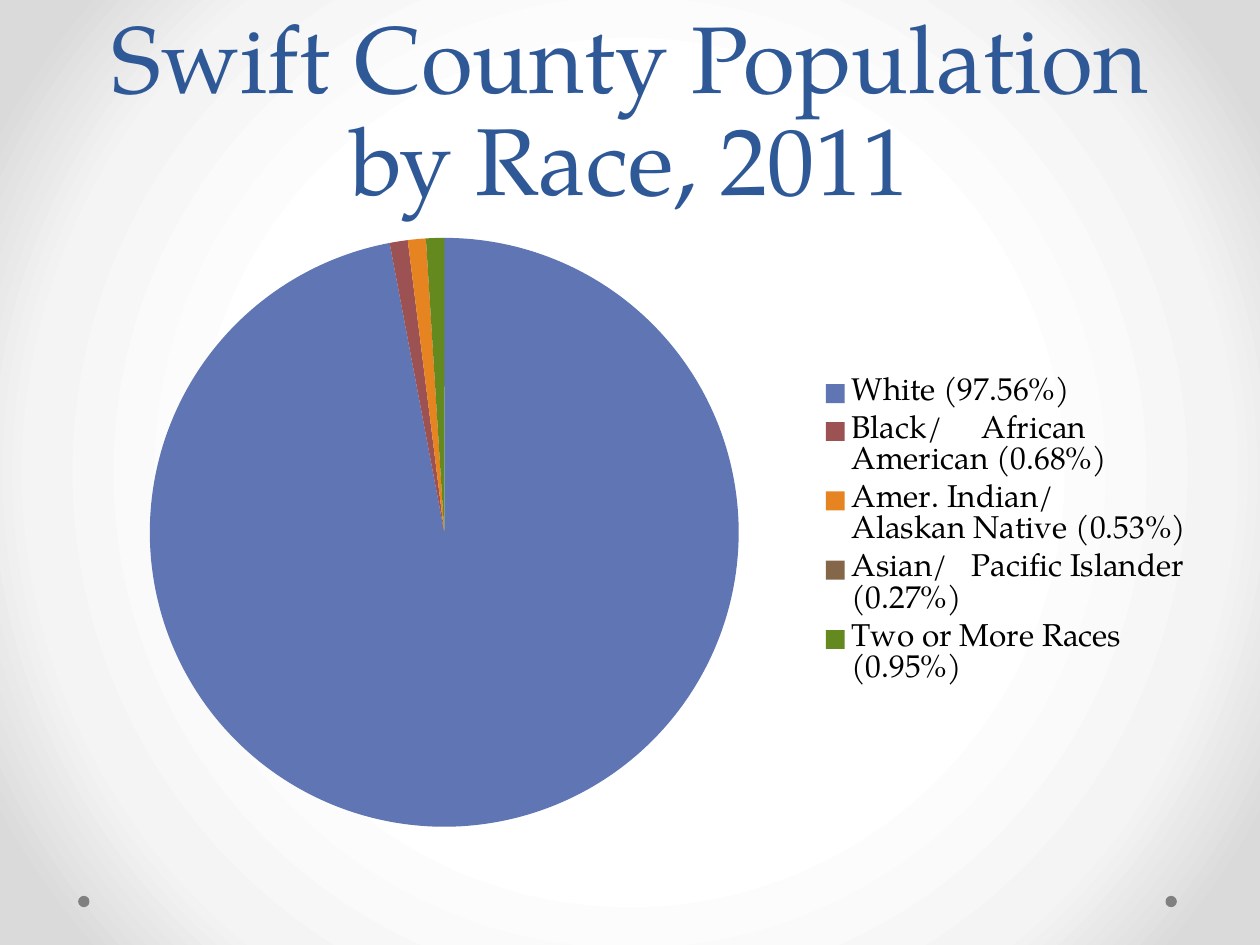
from lxml.etree import SubElement
from pptx import Presentation
from pptx.chart.data import CategoryChartData
from pptx.dml.color import RGBColor
from pptx.enum.chart import XL_CHART_TYPE, XL_LEGEND_POSITION
from pptx.enum.shapes import MSO_SHAPE
from pptx.enum.text import MSO_ANCHOR, PP_ALIGN
from pptx.oxml.ns import qn
from pptx.util import Inches, Pt

FONT = "TeX Gyre Pagella"
COLORS = {"title": "2F5897", "text": "000000", "dot": "808080"}
BACKGROUND_STOPS = [(50, "FFFFFF"), (76, "F4F4F4"), (92, "DADADA")]
RACES = [
    ("White (97.56%)", 98, "6076B4"),
    ("Black/     African American (0.68%)", 1, "9C5252"),
    ("Amer. Indian/    Alaskan Native (0.53%)", 1, "E68422"),
    ("Asian/   Pacific Islander (0.27%)", 0, "846648"),
    ("Two or More Races (0.95%)", 1, "63891F"),
]


def rgb(value):
    return RGBColor.from_string(value)


def set_radial_background(s):
    """Fill the background with a gradient that spreads from the centre."""
    s.background.fill.gradient()
    grad = next(s.element.iter(qn("a:gradFill")))
    for child in list(grad):
        grad.remove(child)
    stops = SubElement(grad, qn("a:gsLst"))
    for position, color in BACKGROUND_STOPS:
        stop = SubElement(stops, qn("a:gs"), pos=str(position * 1000))
        SubElement(stop, qn("a:srgbClr"), val=color)
    path = SubElement(grad, qn("a:path"), path="circle")
    SubElement(path, qn("a:fillToRect"), l="50000", t="50000", r="50000", b="50000")


def add_dot(s, left):
    sp = s.shapes.add_shape(
        MSO_SHAPE.OVAL, Inches(left), Inches(7.11), Inches(0.09), Inches(0.09))
    sp.shadow.inherit = False
    sp.fill.solid()
    sp.fill.fore_color.rgb = rgb(COLORS["dot"])
    sp.line.fill.background()


def add_title(s, text):
    sp = s.shapes.add_textbox(Inches(0.5), Inches(0), Inches(9), Inches(1.75))
    tf = sp.text_frame
    tf.word_wrap = True
    tf.vertical_anchor = MSO_ANCHOR.BOTTOM
    p = tf.paragraphs[0]
    p.text = text
    p.alignment = PP_ALIGN.CENTER
    p.line_spacing = Pt(58)
    font = p.runs[0].font
    font.name, font.size = FONT, Pt(54)
    font.color.rgb = rgb(COLORS["title"])


def add_race_pie(s):
    data = CategoryChartData()
    data.categories = [name for name, _, _ in RACES]
    data.add_series("Series 1", [share for _, share, _ in RACES])
    chart = s.shapes.add_chart(
        XL_CHART_TYPE.PIE, Inches(0.58), Inches(1.75), Inches(9), Inches(4.95), data).chart
    chart.has_title = False
    chart.font.name, chart.font.size = FONT, Pt(18)
    chart.font.color.rgb = rgb(COLORS["text"])
    chart.has_legend = True
    chart.legend.position = XL_LEGEND_POSITION.RIGHT
    chart.legend.include_in_layout = False
    plot = chart.plots[0]
    plot.vary_by_categories = True
    for i, (_, _, color) in enumerate(RACES):
        fmt = plot.series[0].points[i].format
        fmt.fill.solid()
        fmt.fill.fore_color.rgb = rgb(color)
        fmt.line.fill.background()


def main():
    prs = Presentation()
    prs.slide_width, prs.slide_height = Inches(10), Inches(7.5)
    s = prs.slides.add_slide(prs.slide_layouts[6])
    set_radial_background(s)
    for left in (9.25, 0.62):
        add_dot(s, left)
    add_title(s, "Swift County Population by Race, 2011")
    add_race_pie(s)
    prs.save("out.pptx")


if __name__ == "__main__":
    main()
